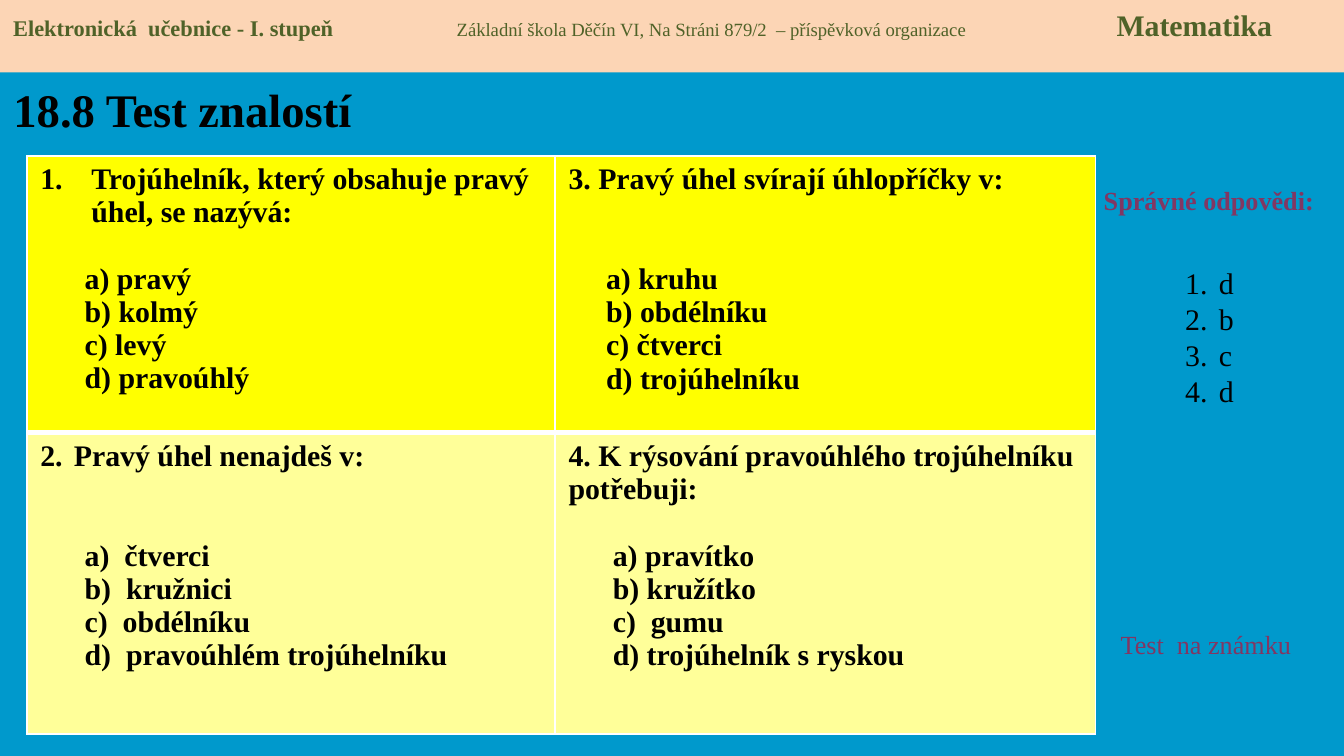
"""Builds the maths quiz slide with four questions and the answer key."""
from lxml.etree import SubElement
from pptx import Presentation
from pptx.dml.color import RGBColor
from pptx.enum.shapes import MSO_SHAPE as Shape
from pptx.enum.text import MSO_ANCHOR as Anchor, MSO_AUTO_SIZE as AutoSize, PP_ALIGN as Align
from pptx.oxml.ns import qn
from pptx.util import Inches, Pt

FONT = "Times New Roman"
BLUE = RGBColor(0x00, 0x99, 0xCC)
PEACH = RGBColor(0xFC, 0xD5, 0xB5)
GREEN = RGBColor(0x4F, 0x62, 0x28)
PLUM = RGBColor(0x81, 0x37, 0x63)
BLACK = RGBColor(0x00, 0x00, 0x00)
YELLOW = RGBColor(0xFF, 0xFF, 0x00)
PALE_YELLOW = RGBColor(0xFF, 0xFF, 0x99)
LINE_HEIGHT = 18


def style(para, size, color, bold=False):
    for span in para.runs:
        span.font.name = FONT
        span.font.size = Pt(size)
        span.font.bold = bold
        span.font.color.rgb = color


def number(para, indent, start=1):
    props = para._p.get_or_add_pPr()
    props.set("marL", str(Inches(indent)))
    props.set("indent", str(-Inches(indent)))
    SubElement(props, qn("a:buFont"), typeface="+mj-lt")
    SubElement(props, qn("a:buAutoNum"), type="arabicPeriod", startAt=str(start))


deck = Presentation()
deck.slide_width, deck.slide_height = Inches(10), Inches(10 * 9 / 16)
page = deck.slides.add_slide(deck.slide_layouts[5])
page.background.fill.solid()
page.background.fill.fore_color.rgb = BLUE

title = page.shapes.title
title.left, title.top, title.width, title.height = Inches(0), Inches(0.55), Inches(3.19), Inches(0.52)
title.text_frame.text = "18.8 Test znalostí"
title.text_frame.auto_size = AutoSize.NONE
title.text_frame.vertical_anchor = Anchor.MIDDLE
title.text_frame.paragraphs[0].alignment = Align.LEFT
style(title.text_frame.paragraphs[0], 25, BLACK, True)

questions = [
    [(["Trojúhelník, který obsahuje pravý", "úhel, se nazývá:"], 0.38, 1, 0.33, 1,
      ["a) pravý", "b) kolmý", "c) levý", "d) pravoúhlý"]),
     (["3. Pravý úhel svírají úhlopříčky v:"], 0, 3, 0.28, 2,
      ["a) kruhu", "b) obdélníku", "c) čtverci", "d) trojúhelníku"])],
    [(["Pravý úhel nenajdeš v:"], 0.25, 2, 0.33, 2,
      ["a)  čtverci", "b)  kružnici", "c)  obdélníku", "d)  pravoúhlém trojúhelníku"]),
     (["4. K rýsování pravoúhlého trojúhelníku potřebuji:"], 0, 4, 0.33, 1,
      ["a) pravítko", "b) kružítko", "c)  gumu", "d) trojúhelník s ryskou"])],
]
bottom_widths = (3, 1)

quiz = page.shapes.add_table(2, 2, Inches(0.2), Inches(1.16), Inches(7.95), Inches(4.3)).table
for column, width in zip(quiz.columns, (3.93, 4.02)):
    column.width = Inches(width)
for row, height in zip(quiz.rows, (2.06, 2.24)):
    row.height = Inches(height)

for row, (row_questions, fill) in enumerate(zip(questions, (YELLOW, PALE_YELLOW))):
    for col, (question, hang, start, indent, gap, options) in enumerate(row_questions):
        cell = quiz.cell(row, col)
        cell_props = cell._tc.get_or_add_tcPr()
        for edge, width in zip("LRTB", (1, 1, 1, bottom_widths[row])):
            line = SubElement(cell_props, qn(f"a:ln{edge}"), w=str(Pt(width)))
            SubElement(SubElement(line, qn("a:solidFill")), qn("a:srgbClr"), val="FFFFFF")
        cell.fill.solid()
        cell.fill.fore_color.rgb = fill
        cell.text_frame.text = "\n".join(question + options)
        paras = cell.text_frame.paragraphs
        for para in paras:
            style(para, 16, BLACK, True)
        if hang:
            number(paras[0], hang, start)
        for para in paras[1:len(question)]:
            para._p.get_or_add_pPr().set("marL", str(Inches(hang)))
        choices = paras[len(question):]
        choices[0].space_before = Pt(gap * LINE_HEIGHT)
        for choice in choices:
            choice._p.get_or_add_pPr().set("marL", str(Inches(indent)))

labels = [
    ("Správné odpovědi:", 8.05, 1.32, 1.89, True, Align.CENTER),
    ("Test  na známku", 8.24, 4.63, 1.57, False, Align.LEFT),
]
for text, left, top, width, bold, alignment in labels:
    label = page.shapes.add_textbox(Inches(left), Inches(top), Inches(width), Inches(0.34))
    label.text_frame.word_wrap = True
    label.text_frame.text = text
    label.text_frame.paragraphs[0].alignment = alignment
    style(label.text_frame.paragraphs[0], 14, PLUM, bold)

answers = page.shapes.add_textbox(Inches(8.72), Inches(1.65), Inches(0.55), Inches(1.99))
answers.text_frame.word_wrap = True
answers.text_frame.margin_top = Inches(0.32)
answers.text_frame.text = "d\nb\nc\nd"
for para in answers.text_frame.paragraphs:
    number(para, 0.25)
    style(para, 16, BLACK)

header = page.shapes.add_shape(Shape.RECTANGLE, Inches(0), Inches(0), Inches(10), Inches(0.54))
header.shadow.inherit = False
header.fill.solid()
header.fill.fore_color.rgb = PEACH
header.line.fill.background()
header.text_frame.word_wrap = True
header.text_frame.vertical_anchor = Anchor.TOP
para = header.text_frame.paragraphs[0]
para.alignment = Align.LEFT
tabs = SubElement(para._p.get_or_add_pPr(), qn("a:tabLst"))
for stop in (3.3, 8.21):
    SubElement(tabs, qn("a:tab"), pos=str(Inches(stop)), algn="l")
for text in ("Elektronická  učebnice - I. stupeň\t",
             "Základní škola Děčín VI, Na Stráni 879/2  – příspěvková organizace\t",
             "Matematika"):
    para.add_run().text = text
style(para, 12, GREEN, True)
school, subject = para.runs[1:]
school.font.size, school.font.bold = Pt(10), False
subject.font.size = Pt(16)

deck.save("out.pptx")
